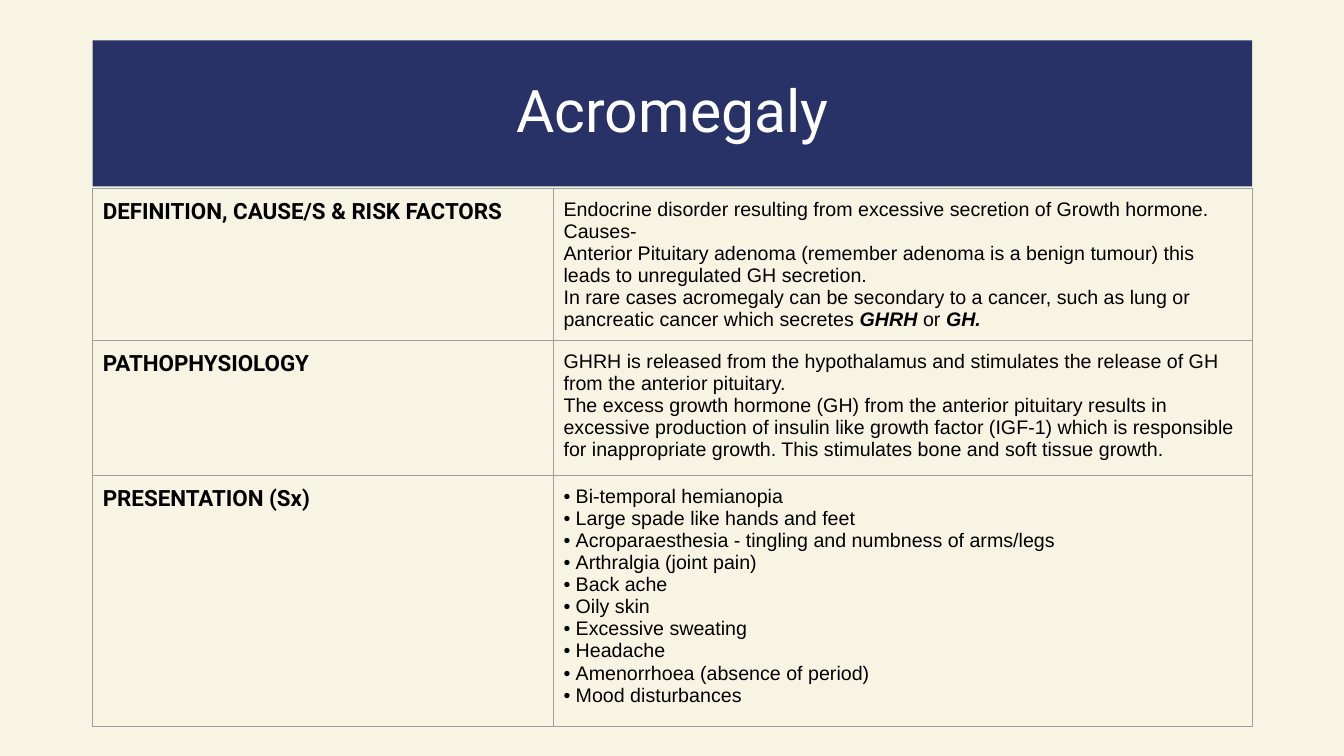
from lxml.etree import SubElement
from pptx import Presentation
from pptx.dml.color import RGBColor
from pptx.enum.shapes import MSO_SHAPE
from pptx.enum.text import MSO_ANCHOR, PP_ALIGN
from pptx.oxml.ns import qn
from pptx.util import Inches, Pt

CREAM = RGBColor(0xF8, 0xF4, 0xE4)
NAVY = RGBColor(0x28, 0x32, 0x67)
WHITE = RGBColor(0xFF, 0xFF, 0xFF)
BLACK = RGBColor(0x00, 0x00, 0x00)
GREY = RGBColor(0x9E, 0x9E, 0x9E)

LEFT, WIDTH = 0.92, 11.5
COLUMN_WIDTHS = (4.57, 6.93)
BULLET_INDENT = Inches(0.12)

# Each section: heading, row height, bulleted, paragraphs (*...* is bold italic)
SECTIONS = [
    ("DEFINITION, CAUSE/S & RISK FACTORS", 1.49, False, [
        "Endocrine disorder resulting from excessive secretion of Growth hormone.",
        "Causes-",
        "Anterior Pituitary adenoma (remember adenoma is a benign tumour) this "
        "leads to unregulated GH secretion.",
        "In rare cases acromegaly can be secondary to a cancer, such as lung or "
        "pancreatic cancer which secretes *GHRH* or *GH.*",
    ]),
    ("PATHOPHYSIOLOGY", 1.34, False, [
        "GHRH is released from the hypothalamus and stimulates the release of GH "
        "from the anterior pituitary.",
        "The excess growth hormone (GH) from the anterior pituitary results in "
        "excessive production of insulin like growth factor (IGF-1) which is "
        "responsible for inappropriate growth. This stimulates bone and soft "
        "tissue growth.",
    ]),
    ("PRESENTATION (Sx)", 2.49, True, [
        "Bi-temporal hemianopia",
        "Large spade like hands and feet",
        "Acroparaesthesia - tingling and numbness of arms/legs",
        "Arthralgia (joint pain)",
        "Back ache",
        "Oily skin",
        "Excessive sweating",
        "Headache",
        "Amenorrhoea (absence of period)",
        "Mood disturbances",
    ]),
]


def style_run(run, name, size, color, bold=False, italic=False):
    """Set the font of one run."""
    font = run.font
    font.name, font.size = name, Pt(size)
    font.bold, font.italic = bold, italic
    font.color.rgb = color


def add_bullet(paragraph):
    """Give a paragraph a round bullet with a hanging indent."""
    properties = paragraph._p.get_or_add_pPr()
    properties.set("marL", str(BULLET_INDENT))
    properties.set("indent", str(-BULLET_INDENT))
    SubElement(properties, qn("a:buFont"), typeface="Arial")
    SubElement(properties, qn("a:buChar"), char="•")


def add_borders(cell):
    """Draw a thin grey line on all four sides of a cell."""
    properties = cell._tc.get_or_add_tcPr()
    for position, side in enumerate(("a:lnL", "a:lnR", "a:lnT", "a:lnB")):
        border = SubElement(properties, qn(side), w=str(Pt(0.75)))
        fill = SubElement(border, qn("a:solidFill"))
        SubElement(fill, qn("a:srgbClr"), val=str(GREY))
        properties.insert(position, border)


def format_cell(cell):
    """Set the margins, empty fill and borders of a cell."""
    cell.margin_left = cell.margin_right = Inches(0.1)
    cell.margin_top = cell.margin_bottom = Inches(0.1)
    cell.fill.background()
    add_borders(cell)


def write_details(cell, details, bulleted):
    """Fill a cell with paragraphs, setting starred words in bold italic."""
    frame = cell.text_frame
    for index, detail in enumerate(details):
        paragraph = frame.add_paragraph() if index else frame.paragraphs[0]
        if bulleted:
            add_bullet(paragraph)
        for part, words in enumerate(detail.split("*")):
            if words:
                run = paragraph.add_run()
                run.text = words
                starred = part % 2 == 1
                style_run(run, "Arial", 14, BLACK, starred, starred)


def add_title(slide, title):
    """Add the navy title band."""
    band = slide.shapes.add_shape(MSO_SHAPE.RECTANGLE, Inches(LEFT), Inches(0.4),
                                  Inches(WIDTH), Inches(1.45))
    band.shadow.inherit = False
    band.fill.solid()
    band.fill.fore_color.rgb = NAVY
    band.line.fill.background()
    frame = band.text_frame
    frame.word_wrap = True
    frame.vertical_anchor = MSO_ANCHOR.MIDDLE
    frame.text = title
    paragraph = frame.paragraphs[0]
    paragraph.alignment = PP_ALIGN.CENTER
    paragraph.line_spacing = 0.9
    style_run(paragraph.runs[0], "Roboto", 42, WHITE)


def add_sections(slide, sections):
    """Add the table with one row per section."""
    total_height = sum(height for _, height, _, _ in sections)
    table = slide.shapes.add_table(len(sections), len(COLUMN_WIDTHS), Inches(LEFT),
                                   Inches(1.87), Inches(WIDTH),
                                   Inches(total_height)).table
    table.first_row = table.horz_banding = False
    for column, width in zip(table.columns, COLUMN_WIDTHS):
        column.width = Inches(width)
    for row, (heading, height, bulleted, details) in zip(table.rows, sections):
        row.height = Inches(height)
        heading_cell, details_cell = row.cells
        for cell in (heading_cell, details_cell):
            format_cell(cell)
        heading_cell.text_frame.text = heading
        style_run(heading_cell.text_frame.paragraphs[0].runs[0],
                  "Roboto", 16, BLACK, bold=True)
        write_details(details_cell, details, bulleted)


def main():
    """Build and save the slide."""
    presentation = Presentation()
    presentation.slide_width = Inches(13.33)
    presentation.slide_height = Inches(7.5)
    slide = presentation.slides.add_slide(presentation.slide_layouts[6])
    slide.background.fill.solid()
    slide.background.fill.fore_color.rgb = CREAM
    add_sections(slide, SECTIONS)
    add_title(slide, "Acromegaly")
    presentation.save("out.pptx")


if __name__ == "__main__":
    main()
